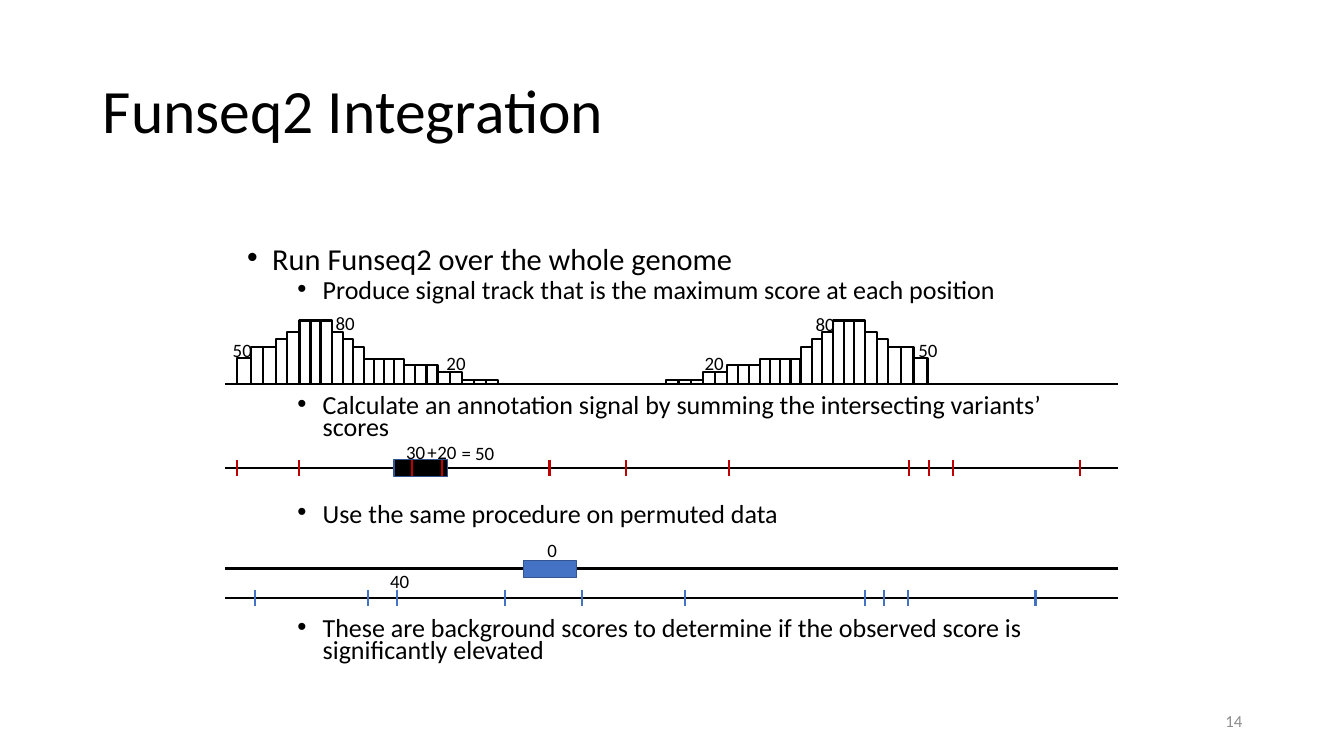
from dataclasses import dataclass
from itertools import accumulate

from lxml import etree
from pptx import Presentation
from pptx.dml.color import RGBColor
from pptx.enum import shapes, text
from pptx.oxml import ns
from pptx.util import Inches, Pt

TITLE = "Funseq2 Integration"
PAGE = "14"
BULLETS = [
    ("Run Funseq2 over the whole genome", 0, 10),
    ("Produce signal track that is the maximum score at each position", 1, 5),
    ("Calculate an annotation signal by summing the intersecting variants’ scores", 1, 66.3),
    ("Use the same procedure on permuted data", 1, 46.3),
    ("These are background scores to determine if the observed score is "
     "significantly elevated", 1, 66.3),
]
BAR_EDGES = [2.35, 2.49, 2.61, 2.74, 2.85] + list(
    accumulate([0.11, 0.1, 0.11, 0.11, 0.1, 0.11] + [0.1] * 4 + [0.11] * 3 + [0.12] * 5,
               initial=2.97))
BAR_HEIGHTS = ([0.26, 0.37, 0.37, 0.45, 0.52] + [0.63] * 3 + [0.52, 0.45, 0.37]
               + [0.25] * 4 + [0.19] * 3 + [0.12] * 2 + [0.04] * 3)
MIRROR_SUM = 11.55
TRACK_LEFT, TRACK_RIGHT = 2.23, 11.09
SIGNAL_Y, OBSERVED_Y, ELEMENT_Y, PERMUTED_Y = 3.81, 4.64, 5.64, 5.93
OBSERVED_VARIANTS = [2.35, 2.97, 4.09, 4.38, 5.45, 6.21, 7.23, 9.02, 9.21, 9.45, 10.71]
PERMUTED_VARIANTS = [x - 0.44 for x in OBSERVED_VARIANTS[1:]]
LABELS = [
    ("80", 3.23, 3.04, 0.39), ("80", 7.99, 3.05, 0.39),
    ("50", 9.01, 3.31, 0.39), ("50", 2.21, 3.31, 0.39),
    ("20", 6.89, 3.44, 0.39), ("20", 4.33, 3.44, 0.39),
    ("20", 4.24, 4.32, 0.39), ("30", 3.93, 4.32, 0.39),
    ("+", 4.14, 4.32, 0.3), ("= 50", 4.48, 4.33, 0.53),
    ("0", 5.33, 5.29, 0.3), ("40", 3.77, 5.6, 0.39),
]


@dataclass(frozen=True)
class Theme:
    font: str = "Calibri"
    black: str = "000000"
    grey: str = "8C8C8C"
    red: str = "C00000"
    blue: str = "4472C4"
    edge: str = "325491"
    title: float = 44
    bullets: tuple = (21.7, 18.6)
    label: float = 13.5
    page: float = 12
    stroke: float = 1.5
    thin: float = 1


theme = Theme()


def rgb(code):
    return RGBColor.from_string(code)


def write(paragraph, content, *, size, color=theme.black, align=text.PP_ALIGN.LEFT,
          spacing=1.0, before=0):
    run = paragraph.add_run()
    run.text = content
    run.font.size = Pt(size)
    run.font.name = theme.font
    run.font.color.rgb = rgb(color)
    paragraph.alignment = align
    paragraph.line_spacing = spacing
    paragraph.space_before = Pt(before)


def place(shape, left, top, width, height):
    shape.left, shape.top = Inches(left), Inches(top)
    shape.width, shape.height = Inches(width), Inches(height)


def add_bullet(paragraph, level):
    paragraph.level = level
    properties = paragraph._p.get_or_add_pPr()
    properties.set("marL", str(Inches(0.25 + 0.5 * level)))
    properties.set("indent", str(Inches(-0.25)))
    font = etree.SubElement(properties, ns.qn("a:buFont"))
    font.set("typeface", "Arial")
    etree.SubElement(properties, ns.qn("a:buChar")).set("char", "•")


def add_line(slide, start, end, color):
    line = slide.shapes.add_connector(
        shapes.MSO_CONNECTOR.STRAIGHT, *(Inches(value) for value in start + end))
    line.line.color.rgb = rgb(color)
    line.line.width = Pt(theme.stroke)
    etree.SubElement(line._element.spPr, ns.qn("a:effectLst"))


def add_box(slide, left, top, width, height, *, fill=None, edge=theme.black,
            stroke=theme.stroke):
    box = slide.shapes.add_shape(
        shapes.MSO_SHAPE.RECTANGLE, *map(Inches, (left, top, width, height)))
    box.shadow.inherit = False
    if fill:
        box.fill.solid()
        box.fill.fore_color.rgb = rgb(fill)
    else:
        box.fill.background()
    box.line.color.rgb = rgb(edge)
    box.line.width = Pt(stroke)


def add_track(slide, y):
    add_line(slide, (TRACK_LEFT, y), (TRACK_RIGHT, y), theme.black)


def add_element(slide, left, y, fill):
    add_box(slide, left, y - 0.08, 0.53, 0.17, fill=fill, edge=theme.edge, stroke=theme.thin)


def add_variants(slide, positions, y, color):
    for x in positions:
        add_line(slide, (x, y - 0.08), (x, y + 0.08), color)


def add_signal(slide):
    add_track(slide, SIGNAL_Y)
    for left, right, height in zip(BAR_EDGES, BAR_EDGES[1:], BAR_HEIGHTS):
        for x in (left, MIRROR_SUM - right):
            add_box(slide, x, SIGNAL_Y - height, right - left, height)


def add_texts(slide):
    title, body = slide.placeholders
    place(title, 0.92, 0.4, 11.5, 1.45)
    title.text_frame.auto_size = text.MSO_AUTO_SIZE.NONE
    title.text_frame.vertical_anchor = text.MSO_ANCHOR.MIDDLE
    write(title.text_frame.paragraphs[0], TITLE, size=theme.title, spacing=0.9)

    place(body, 2.35, 2.43, 8.62, 4.33)
    frame = body.text_frame
    frame.auto_size = text.MSO_AUTO_SIZE.NONE
    for index, (content, level, before) in enumerate(BULLETS):
        paragraph = frame.add_paragraph() if index else frame.paragraphs[0]
        write(paragraph, content, size=theme.bullets[level], spacing=0.7, before=before)
        add_bullet(paragraph, level)

    page = slide.shapes.add_textbox(*map(Inches, (9.42, 6.95, 3, 0.4)))
    page.text_frame.word_wrap = True
    page.text_frame.vertical_anchor = text.MSO_ANCHOR.MIDDLE
    write(page.text_frame.paragraphs[0], PAGE, size=theme.page, color=theme.grey,
          align=text.PP_ALIGN.RIGHT)


def add_labels(slide):
    for content, left, top, width in LABELS:
        label = slide.shapes.add_textbox(*map(Inches, (left, top, width, 0.33)))
        label.text_frame.word_wrap = False
        write(label.text_frame.paragraphs[0], content, size=theme.label)


def main():
    presentation = Presentation()
    presentation.slide_width, presentation.slide_height = Inches(13.33), Inches(7.5)
    slide = presentation.slides.add_slide(presentation.slide_layouts[1])
    add_texts(slide)
    add_signal(slide)
    add_track(slide, OBSERVED_Y)
    add_element(slide, 3.91, OBSERVED_Y, theme.black)
    add_variants(slide, OBSERVED_VARIANTS, OBSERVED_Y, theme.red)
    add_track(slide, ELEMENT_Y)
    add_track(slide, PERMUTED_Y)
    add_element(slide, 5.19, ELEMENT_Y, theme.blue)
    add_variants(slide, PERMUTED_VARIANTS, PERMUTED_Y, theme.blue)
    add_labels(slide)
    presentation.save("out.pptx")


if __name__ == "__main__":
    main()
